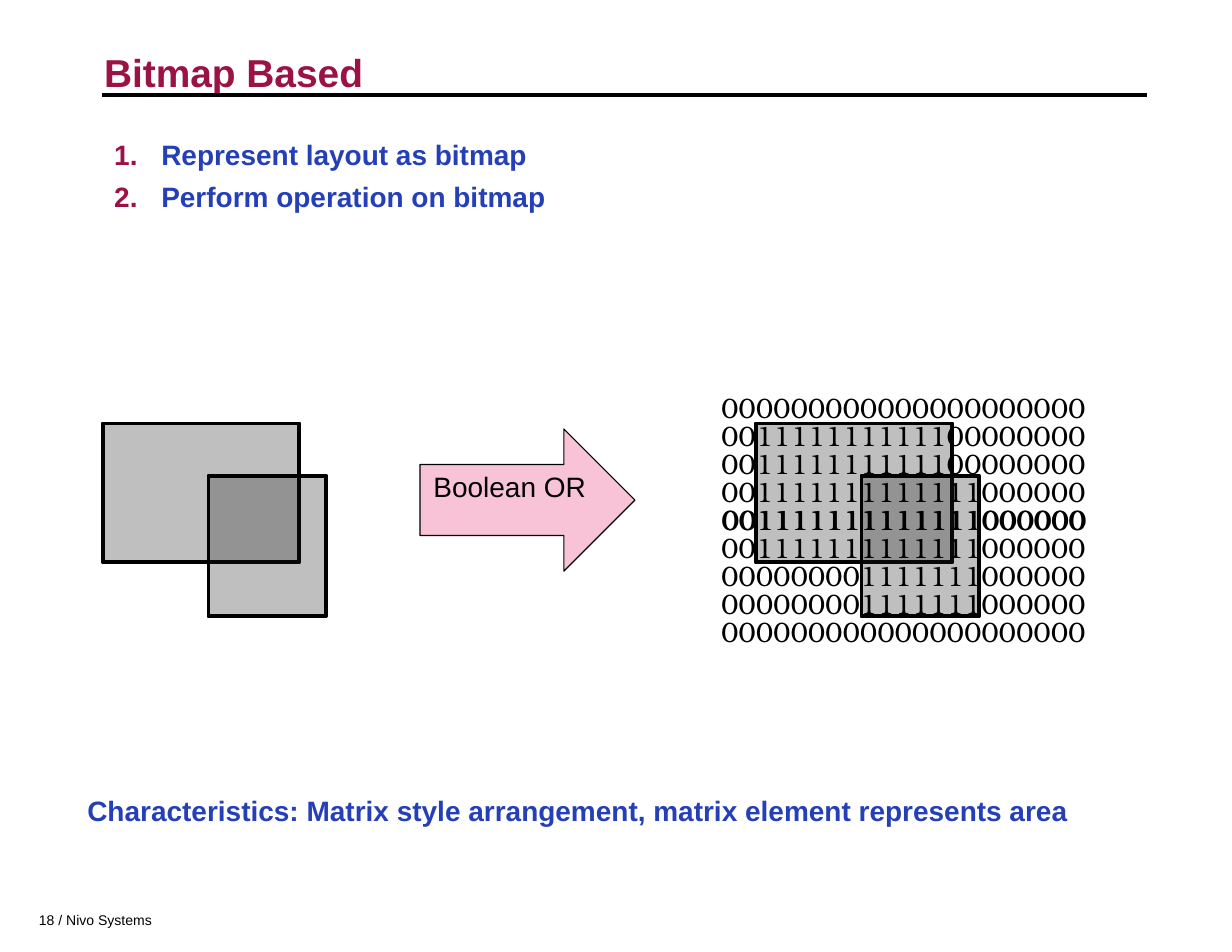
"""Build a slide on Boolean operations over bitmap layouts."""
from lxml import etree
from pptx import Presentation
from pptx import util as u
from pptx.dml.color import RGBColor
from pptx.enum import shapes, text
from pptx.oxml.ns import qn

HUES = {"ink": "000000", "wine": "9B1244", "blue": "253FB6",
        "pink": "F8C3D6", "gray": "323232"}

deck = Presentation()
deck.slide_width, deck.slide_height = u.Inches(11), u.Inches(8.5)
slide = deck.slides.add_slide(deck.slide_layouts[1])
parts = slide.shapes


def place(x, y, wide, high):
    """Turn percent shares of the slide into lengths."""
    col, row = deck.slide_width / 100, deck.slide_height / 100
    return int(x * col), int(y * row), int(wide * col), int(high * row)


def write(shape, lines, size, hue, bold=False, font="Arial", pad=(0.1, 0.05), wrap=True):
    """Fill a shape with formatted lines and return its paragraphs."""
    frame = shape.text_frame
    frame.text = "\n".join(lines)
    frame.word_wrap = wrap
    frame.auto_size = text.MSO_AUTO_SIZE.NONE
    frame.vertical_anchor = text.MSO_ANCHOR.TOP
    frame.margin_left = frame.margin_right = u.Inches(pad[0])
    frame.margin_top = frame.margin_bottom = u.Inches(pad[1])
    for para in frame.paragraphs:
        para.alignment = text.PP_ALIGN.LEFT
        for run in para.runs:
            run.font.size, run.font.name, run.font.bold = u.Pt(size), font, bold
            run.font.color.rgb = RGBColor.from_string(HUES[hue])
    return frame.paragraphs


x, y, wide, _ = place(8.27, 10, 84.82, 0)
rule = parts.add_connector(shapes.MSO_CONNECTOR.STRAIGHT, x, y, x + wide, y)
rule.line.width = u.Pt(2.5)
rule.line.color.rgb = RGBColor.from_string(HUES["ink"])
etree.SubElement(rule._element.spPr, qn("a:effectLst"))

foot = parts.add_textbox(*place(2.27, 95.18, 11.82, 2.94))
write(foot, ["18 / Nivo Systems"], 9, "ink", wrap=False)

title = parts.title
title.left, title.top, title.width, title.height = place(8.45, 3.88, 84.55, 10)
write(title, ["Bitmap Based"], 25, "wine", True, pad=(0, 0.06))[0].line_spacing = 1.1

body = slide.placeholders[1]
body.left, body.top, body.width, body.height = place(8.27, 13.76, 84.73, 80.35)
steps = ["Represent layout as bitmap", "Perform operation on bitmap"]
for i, para in enumerate(write(body, steps, 18, "blue", True, pad=(0.11, 0.06))):
    para.space_before = u.Pt(5 * i)
    props = para._p.get_or_add_pPr()
    props.set("marL", str(u.Inches(0.42)))
    props.set("indent", str(u.Inches(-0.42)))
    tint = etree.SubElement(props, qn("a:buClr"))
    etree.SubElement(tint, qn("a:srgbClr"), val=HUES["wine"])
    etree.SubElement(props, qn("a:buFont"), typeface="Arial")
    etree.SubElement(props, qn("a:buAutoNum"), type="arabicPeriod")

arrow = parts.add_shape(shapes.MSO_SHAPE.RIGHT_ARROW, *place(34.09, 45.06, 17.45, 14.94))
arrow.shadow.inherit = False
arrow.fill.solid()
arrow.fill.fore_color.rgb = RGBColor.from_string(HUES["pink"])
arrow.line.color.rgb = RGBColor.from_string(HUES["ink"])
arrow.line.width = u.Pt(0.75)
write(arrow, ["Boolean OR"], 18, "ink")[0].alignment = text.PP_ALIGN.CENTER

boxes = [(8.36, 44.47, 15.91, 14.59), (16.91, 50, 9.55, 14.71)]
for shift in (0, 53) * 2:
    for x, y, wide, high in boxes:
        box = parts.add_shape(shapes.MSO_SHAPE.RECTANGLE, *place(x + shift, y, wide, high))
        box.shadow.inherit = False
        box.fill.solid()
        box.fill.fore_color.rgb = RGBColor.from_string(HUES["gray"])
        shade = box._element.spPr.find(".//" + qn("a:srgbClr"))
        etree.SubElement(shade, qn("a:alpha"), val="17000")
        box.line.color.rgb = RGBColor.from_string(HUES["ink"])
        box.line.width = u.Pt(2.25)

spans = [(0, 0), (2, 11), (2, 11), (2, 13), (2, 13), (2, 13), (8, 7), (8, 7), (0, 0)]
middle = len(spans) // 2
for i, (start, ones) in enumerate(spans):
    bits = ("0" * start + "1" * ones).ljust(21, "0")
    for nudge in (0, 0.09) if i == middle else (0,):
        line = parts.add_textbox(*place(57.64 + nudge, 40.47 + 2.94 * i, 31.64, 4.71))
        write(line, [bits], 18, "ink", font="TeX Gyre Bonum", wrap=False)

note = parts.add_textbox(*place(6.09, 82.7, 84.73, 10.47))
write(note, ["Characteristics: Matrix style arrangement, matrix element represents area"],
      18, "blue", True, pad=(0.11, 0.06))

deck.save("out.pptx")
